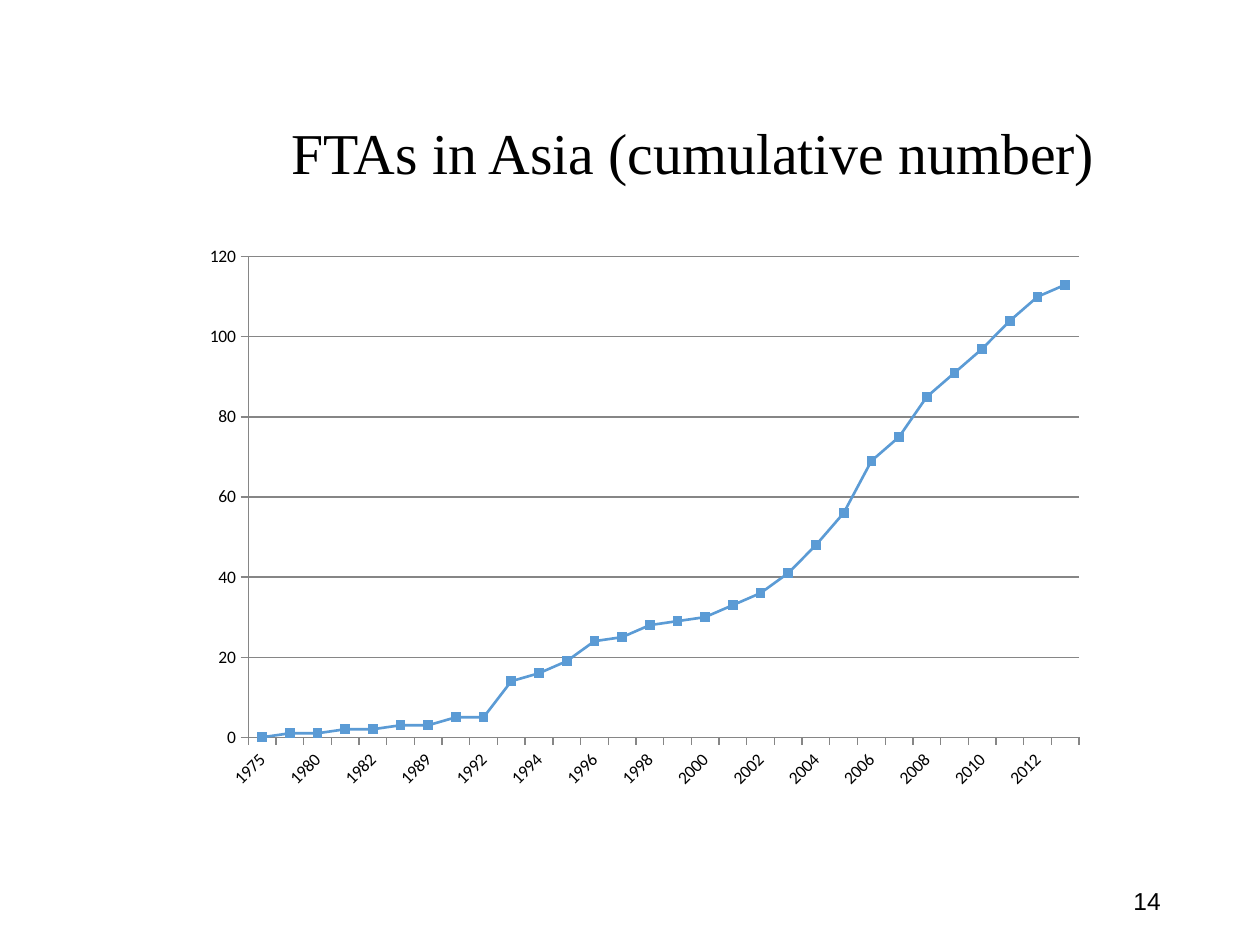
"""Build a slide with a line chart of the cumulative number of FTAs in Asia."""
from lxml.etree import SubElement
from pptx import Presentation
from pptx.chart.data import CategoryChartData
from pptx.dml.color import RGBColor
from pptx.enum.chart import XL_CHART_TYPE, XL_MARKER_STYLE, XL_TICK_MARK
from pptx.enum.text import MSO_ANCHOR, PP_ALIGN
from pptx.oxml.ns import qn
from pptx.util import Cm, Pt

COLORS = {"text": "000000", "series": "5B9BD5", "axis": "868686"}
SLIDE_SIZE = (25.4, 19.05)
TEXTS = [
    {"text": "FTAs in Asia (cumulative number)", "box": (2.54, 2.34, 22.86, 1.6),
     "align": PP_ALIGN.CENTER, "spacing": 0.9,
     "font": {"name": "Times New Roman", "size": Pt(33)}},
    {"text": "14", "box": (17.93, 17.65, 5.72, 1.02),
     "align": PP_ALIGN.RIGHT, "spacing": 1.0,
     "font": {"name": "Arial", "size": Pt(14)}},
]
CHART_BOX = (3.91, 4.72, 18.21, 11.4)
CHART_FONT = {"name": "Calibri", "size": Pt(10)}
PLOT_LAYOUT = {"layoutTarget": "inner", "xMode": "edge", "yMode": "edge",
               "x": 0.06, "y": 0.04, "w": 0.92, "h": 0.85}
YEARS = [1975, 1976, *range(1980, 1984), 1989, *range(1991, 2014)]
AGREEMENTS = [0, 1, 1, 2, 2, 3, 3, 5, 5, 14, 16, 19, 24, 25, 28,
              29, 30, 33, 36, 41, 48, 56, 69, 75, 85, 91, 97, 104, 110, 113]
VALUE_AXIS = {"minimum_scale": 0, "maximum_scale": 120, "major_unit": 20,
              "has_major_gridlines": True}


def color(name):
    return RGBColor.from_string(COLORS[name])


def set_attributes(target, values):
    for name, value in values.items():
        setattr(target, name, value)


def style_font(font, values):
    set_attributes(font, values)
    font.color.rgb = color("text")


def style_line(line, name, width):
    line.color.rgb = color(name)
    line.width = Pt(width)


def add_text(slide, item):
    shape = slide.shapes.add_textbox(*map(Cm, item["box"]))
    frame = shape.text_frame
    set_attributes(frame, {"word_wrap": True, "vertical_anchor": MSO_ANCHOR.MIDDLE})
    paragraph = frame.paragraphs[0]
    set_attributes(paragraph, {"alignment": item["align"], "line_spacing": item["spacing"]})
    run = paragraph.add_run()
    run.text = item["text"]
    style_font(run.font, item["font"])


def place_plot(chart):
    plot_area = chart.element.find(".//" + qn("c:plotArea"))
    for layout in plot_area.findall(qn("c:layout")):
        plot_area.remove(layout)
    layout = SubElement(plot_area, qn("c:layout"))
    plot_area.insert(0, layout)
    manual = SubElement(layout, qn("c:manualLayout"))
    for name, value in PLOT_LAYOUT.items():
        SubElement(manual, qn("c:" + name)).set("val", str(value))


def add_line_chart(slide):
    data = CategoryChartData()
    data.categories = [str(year) for year in YEARS]
    data.add_series("Series 1", AGREEMENTS)
    chart = slide.shapes.add_chart(
        XL_CHART_TYPE.LINE_MARKERS, *map(Cm, CHART_BOX), data).chart
    set_attributes(chart, {"has_legend": False, "has_title": False})
    style_font(chart.font, CHART_FONT)
    place_plot(chart)

    plot = chart.plots[0]
    plot.vary_by_categories = False
    series = plot.series[0]
    series.smooth = False
    style_line(series.format.line, "series", 1.5)
    set_attributes(series.marker, {"style": XL_MARKER_STYLE.SQUARE, "size": 5})
    series.marker.format.fill.solid()
    series.marker.format.fill.fore_color.rgb = color("series")
    style_line(series.marker.format.line, "series", 0.75)

    set_attributes(chart.value_axis, VALUE_AXIS)
    chart.category_axis.has_major_gridlines = False
    style_line(chart.value_axis.major_gridlines.format.line, "axis", 0.75)
    for axis in (chart.category_axis, chart.value_axis):
        set_attributes(axis, {"major_tick_mark": XL_TICK_MARK.OUTSIDE,
                              "minor_tick_mark": XL_TICK_MARK.NONE})
        style_line(axis.format.line, "axis", 0.75)
        style_font(axis.tick_labels.font, CHART_FONT)
    body = chart.category_axis._element.find(qn("c:txPr")).find(qn("a:bodyPr"))
    body.set("rot", "-2700000")


def main():
    presentation = Presentation()
    presentation.slide_width, presentation.slide_height = map(Cm, SLIDE_SIZE)
    slide = presentation.slides.add_slide(presentation.slide_layouts[6])
    for item in TEXTS:
        add_text(slide, item)
    add_line_chart(slide)
    presentation.save("out.pptx")


if __name__ == "__main__":
    main()
